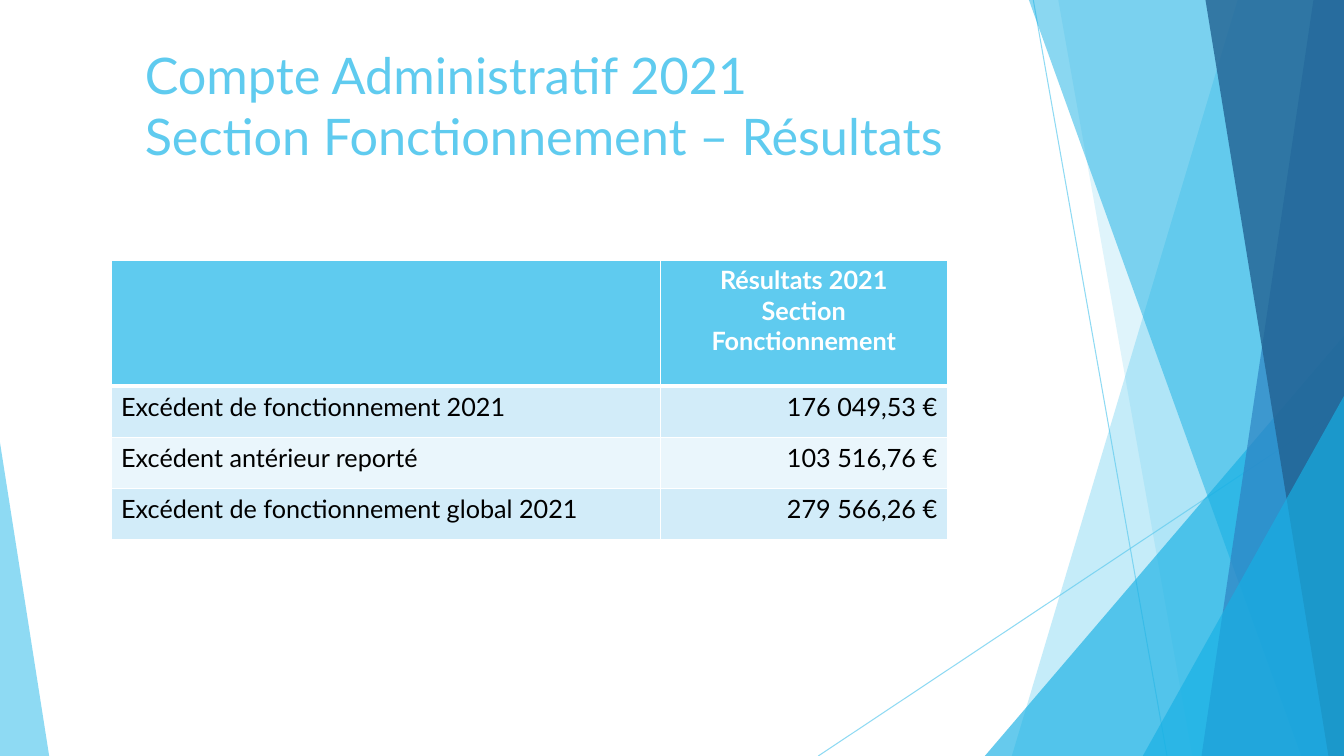
from lxml import etree
from pptx import Presentation
from pptx import util as u
from pptx.dml.color import RGBColor
from pptx.enum import shapes, text
from pptx.oxml.ns import qn

WIDTH, HEIGHT = 33.87, 19.05
FONT = "Lato"
SKY, AZURE, BLUE, NAVY = "5FCBEF", "17B0E4", "2E83C3", "226292"

TITLE = "Compte Administratif 2021\vSection Fonctionnement – Résultats"
HEADER = ["", "Résultats 2021\nSection Fonctionnement"]
RESULTS = [
    ["Excédent de fonctionnement 2021", "176 049,53 €"],
    ["Excédent antérieur reporté", "103 516,76 €"],
    ["Excédent de fonctionnement global 2021", "279 566,26 €"],
]


def rgb(color):
    return RGBColor.from_string(color)


def set_alpha(fill, percent):
    clr = fill.find(".//" + qn("a:srgbClr"))
    etree.SubElement(clr, qn("a:alpha")).set("val", str(percent * 1000))


def paint(sp, color, percent):
    sp.shadow.inherit = False
    sp.fill.solid()
    sp.fill.fore_color.rgb = rgb(color)
    set_alpha(sp._element.spPr.find(qn("a:solidFill")), percent)
    sp.line.fill.background()


def add_band(s, top_x, bottom_x, right, height, color, percent):
    fb = s.shapes.build_freeform(u.Cm(top_x), u.Cm(0))
    corners = [(right, 0), (right, height), (bottom_x, height)]
    fb.add_line_segments([(u.Cm(x), u.Cm(y)) for x, y in corners], close=True)
    paint(fb.convert_to_shape(), color, percent)


def add_triangle(s, left, top, right, bottom, apex, color, percent):
    sp = s.shapes.add_shape(
        shapes.MSO_SHAPE.ISOSCELES_TRIANGLE,
        u.Cm(left), u.Cm(top), u.Cm(right - left), u.Cm(bottom - top))
    sp.adjustments[0] = apex
    paint(sp, color, percent)


def add_ray(s, x1, y1, x2, y2):
    ln = s.shapes.add_connector(
        shapes.MSO_CONNECTOR.STRAIGHT, u.Cm(x1), u.Cm(y1), u.Cm(x2), u.Cm(y2))
    ln.line.color.rgb = rgb(SKY)
    ln.line.width = u.Pt(0.75)
    spPr = ln._element.spPr
    set_alpha(spPr.find(qn("a:ln")), 70)
    etree.SubElement(spPr, qn("a:effectLst"))


def add_facets(s, width, height):
    add_ray(s, 26.04, 0, 29.41, height)
    add_ray(s, width, 10.24, 20.62, height)
    add_band(s, 31.19, 25.5, width, height, SKY, 36)
    add_band(s, 26.67, 30.05, width, height, SKY, 20)
    add_triangle(s, 24.82, 8.46, width, height, 1, AZURE, 66)
    add_band(s, 25.93, 32.79, width, height, AZURE, 50)
    add_band(s, 33.1, 30.28, width, height, BLUE, 70)
    add_band(s, 30.38, 33.48, width, height, NAVY, 80)
    add_triangle(s, 28.8, 9.98, width, height, 1, AZURE, 66)
    add_triangle(s, 0, 11.15, 1.24, height, 0, SKY, 70)


def add_title(s, left, top, width, height):
    tf = s.shapes.add_textbox(
        u.Cm(left), u.Cm(top), u.Cm(width), u.Cm(height)).text_frame
    tf.word_wrap = True
    tf.vertical_anchor = text.MSO_ANCHOR.TOP
    p = tf.paragraphs[0]
    p.text = TITLE
    p.font.name, p.font.size = FONT, u.Pt(36)
    p.font.color.rgb = rgb(SKY)


def set_borders(cell, top, bottom):
    tcPr = cell._tc.get_or_add_tcPr()
    sides = [("L", 1), ("R", 1), ("T", top), ("B", bottom)]
    for i, (side, points) in enumerate(sides):
        ln = etree.Element(qn("a:ln" + side), w=str(u.Pt(points)))
        fill = etree.SubElement(ln, qn("a:solidFill"))
        etree.SubElement(fill, qn("a:srgbClr")).set("val", "FFFFFF")
        tcPr.insert(i, ln)


def fill_cell(cell, value, row, align):
    header = row == 0
    cell.fill.solid()
    cell.fill.fore_color.rgb = rgb(
        SKY if header else "D2ECF9" if row % 2 else "EAF6FC")
    set_borders(cell, 3 if row == 1 else 1, 3 if header else 1)
    cell.text = value
    for p in cell.text_frame.paragraphs:
        p.alignment = align
        p.font.name, p.font.size, p.font.bold = FONT, u.Pt(18), header
        p.font.color.rgb = rgb("FFFFFF" if header else "000000")


def add_results(s, left, top, width, height):
    rows = [HEADER] + RESULTS
    header_height, label_width = 3.18, 13.84
    tbl = s.shapes.add_table(
        len(rows), 2, u.Cm(left), u.Cm(top), u.Cm(width), u.Cm(height)).table
    tbl.columns[0].width = u.Cm(label_width)
    tbl.columns[1].width = u.Cm(width - label_width)
    for i, values in enumerate(rows):
        tbl.rows[i].height = u.Cm(
            (height - header_height) / len(RESULTS) if i else header_height)
        value_align = text.PP_ALIGN.RIGHT if i else text.PP_ALIGN.CENTER
        for j, align in enumerate([text.PP_ALIGN.LEFT, value_align]):
            fill_cell(tbl.cell(i, j), values[j], i, align)


def main():
    prs = Presentation()
    prs.slide_width, prs.slide_height = u.Cm(WIDTH), u.Cm(HEIGHT)
    s = prs.slides.add_slide(prs.slide_layouts[6])
    add_facets(s, WIDTH, HEIGHT)
    add_title(s, 3.4, 0.99, 27.51, 3.66)
    add_results(s, 2.8, 6.55, 21.07, 7.05)
    prs.save("out.pptx")


if __name__ == "__main__":
    main()
